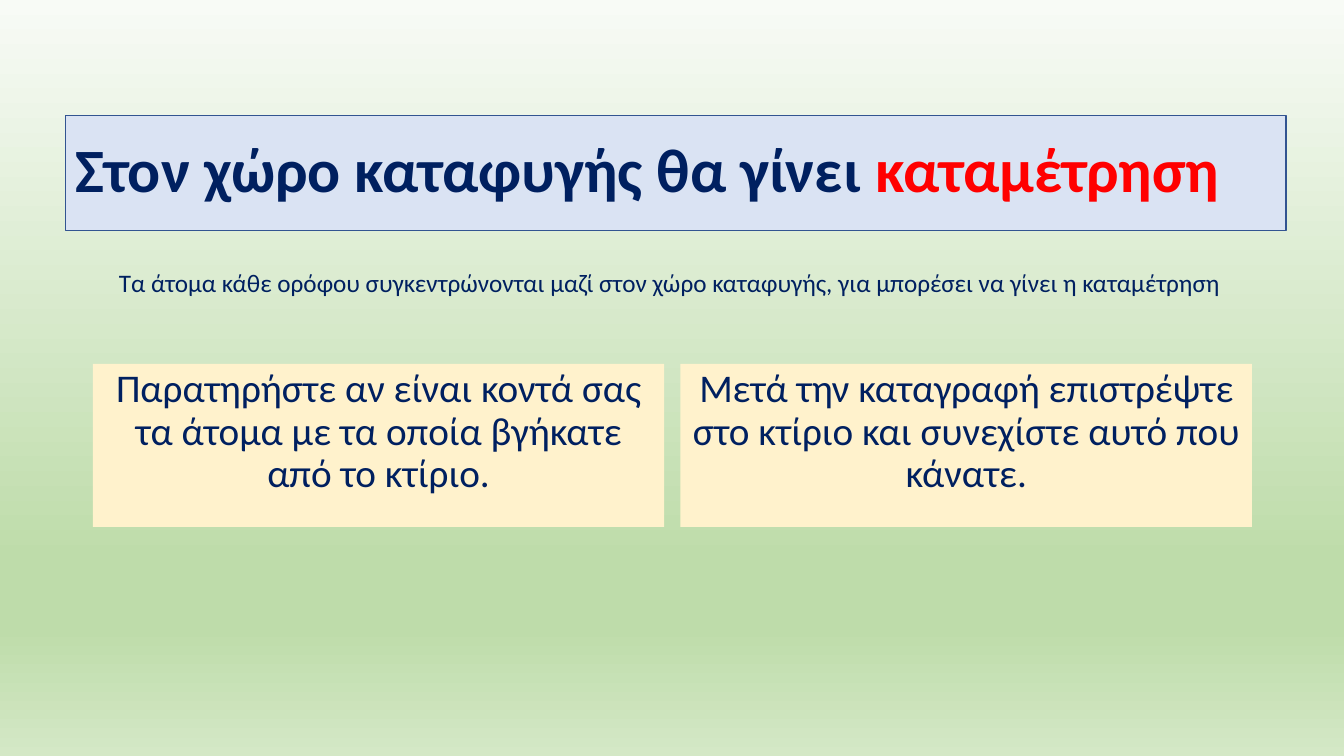
from lxml import etree
from pptx import Presentation
from pptx.dml.color import RGBColor
from pptx.enum.shapes import MSO_SHAPE
from pptx.enum.text import MSO_ANCHOR, PP_ALIGN
from pptx.oxml.ns import qn
from pptx.util import Cm, Pt

RECT = MSO_SHAPE.RECTANGLE
TOP, MIDDLE = MSO_ANCHOR.TOP, MSO_ANCHOR.MIDDLE
LEFT, CENTER = PP_ALIGN.LEFT, PP_ALIGN.CENTER
FONT = "Calibri"
COLORS = {
    "navy": "002060",
    "red": "FF0000",
    "banner": "DAE3F3",
    "edge": "325491",
    "card": "FFF2CC",
}
STOPS = [(0, "F8FBF6"), (74, "BEDCAA"), (83, "BEDCAA"), (100, "D4E8C6")]
TITLE = [("Στον χώρο καταφυγής θα γίνει ", "navy"), ("καταμέτρηση", "red")]
NOTE = ("Τα άτομα κάθε ορόφου συγκεντρώνονται μαζί στον χώρο καταφυγής, "
        "για μπορέσει να γίνει η καταμέτρηση ")
CARDS = [
    "Παρατηρήστε αν είναι κοντά σας τα άτομα με τα οποία βγήκατε από το κτίριο.",
    "Μετά την καταγραφή επιστρέψτε στο κτίριο και συνεχίστε αυτό που κάνατε.",
]


def color(name):
    return RGBColor.from_string(COLORS[name])


def style(run, size, tint="navy", bold=False):
    font = run.font
    font.name, font.size, font.bold = FONT, Pt(size), bold
    font.color.rgb = color(tint)


def panel(slide, box, fill, anchor):
    shape = slide.shapes.add_shape(RECT, *map(Cm, box))
    shape.shadow.inherit = False
    shape.fill.solid()
    shape.fill.fore_color.rgb = color(fill)
    shape.line.fill.background()
    frame = shape.text_frame
    frame.word_wrap = True
    frame.vertical_anchor = anchor
    frame.paragraphs[0].line_spacing = 0.9
    return shape


def backdrop(slide):
    fill = slide.background.fill
    fill.gradient()
    fill.gradient_angle = 270
    stops = slide.element.find(".//" + qn("a:gsLst"))
    for old in list(stops):
        stops.remove(old)
    for place, tint in STOPS:
        stop = etree.SubElement(stops, qn("a:gs"), pos=str(place * 1000))
        etree.SubElement(stop, qn("a:srgbClr"), val=tint)


def banner(slide, box):
    shape = panel(slide, box, "banner", MIDDLE)
    shape.line.color.rgb = color("edge")
    shape.line.width = Pt(0.75)
    para = shape.text_frame.paragraphs[0]
    para.alignment = LEFT
    for text, tint in TITLE:
        run = para.add_run()
        run.text = text
        style(run, 44, tint, True)


def note(slide, box):
    frame = slide.shapes.add_textbox(*map(Cm, box)).text_frame
    frame.word_wrap = True
    para = frame.paragraphs[0]
    para.text = NOTE
    para.alignment = CENTER
    style(para.runs[0], 18)


def cards(slide, box, gap=0.41):
    left, top, width, height = box
    each = (width - gap * (len(CARDS) - 1)) / len(CARDS)
    for i, text in enumerate(CARDS):
        place = (left + i * (each + gap), top, each, height)
        para = panel(slide, place, "card", TOP).text_frame.paragraphs[0]
        para.text = text
        para.alignment = CENTER
        para.space_before = Pt(10)
        style(para.runs[0], 28)


def main():
    deck = Presentation()
    deck.slide_width, deck.slide_height = Cm(33.87), Cm(19.05)
    slide = deck.slides.add_slide(deck.slide_layouts[6])
    backdrop(slide)
    banner(slide, (1.65, 2.9, 30.76, 2.92))
    cards(slide, (2.34, 9.17, 29.21, 4.11))
    note(slide, (2.34, 6.6, 29.21, 1.02))
    deck.save("out.pptx")


if __name__ == "__main__":
    main()
